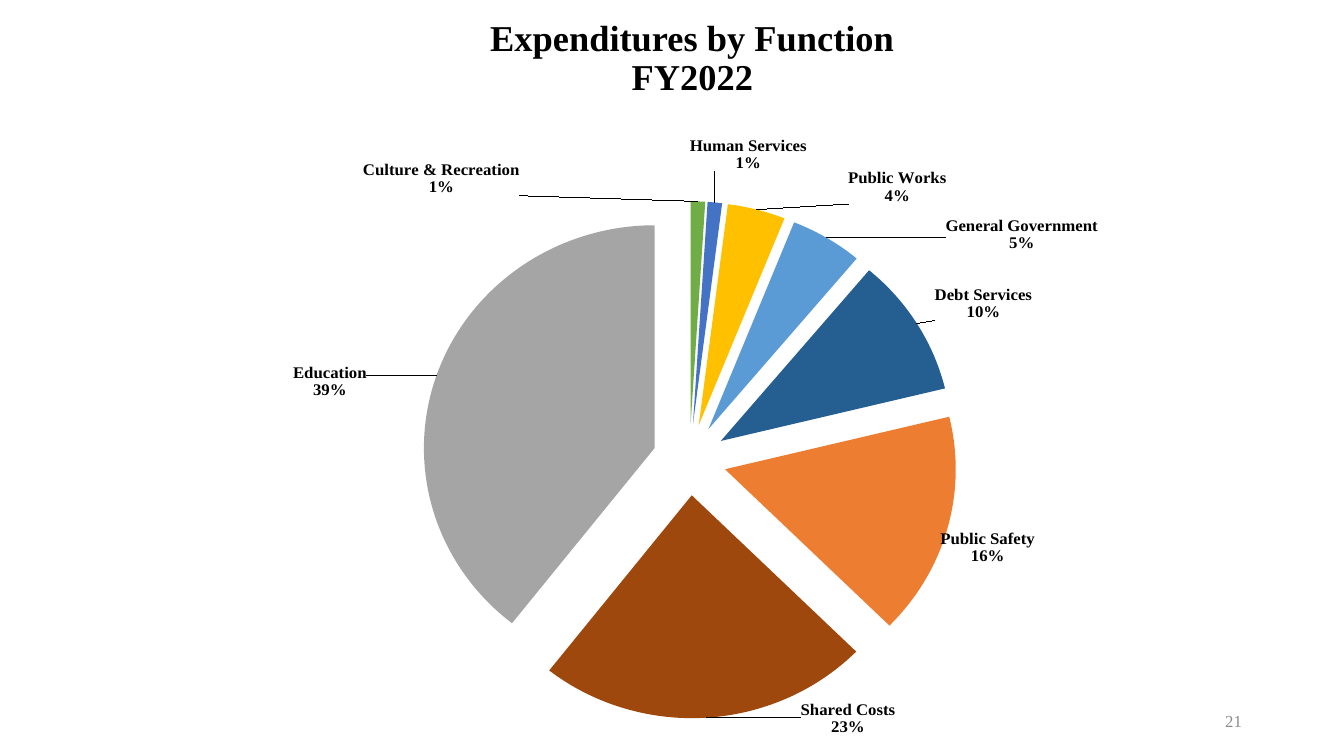
from dataclasses import dataclass

from lxml import etree
from pptx import Presentation
from pptx import util as u
from pptx.chart import data
from pptx.dml.color import RGBColor
from pptx.enum import chart as charts
from pptx.enum import text
from pptx.oxml import parse_xml
from pptx.oxml.ns import nsdecls, qn


@dataclass(frozen=True)
class Theme:
    font: str = "Times New Roman"
    ink: str = "000000"
    muted: str = "8C8C8C"
    title_size: int = 26
    label_size: int = 12
    number_size: int = 12


# function, percent, slice colour, label shift as fractions of the chart
EXPENDITURES = [
    ("Culture & Recreation", 1, "70AD47", (-0.2, 0)),
    ("Human Services", 1, "4472C4", (-0.02, -0.04)),
    ("Public Works", 4, "FFC000", (0.07, 0)),
    ("General Government", 5, "5B9BD5", (0.09, 0.03)),
    ("Debt Services", 10, "255E91", (0.01, 0)),
    ("Public Safety", 16, "ED7D31", (-0.01, 0)),
    ("Shared Costs", 23, "9E480E", (0.11, -0.02)),
    ("Education", 39, "A5A5A5", (-0.05, 0.04)),
]


def manual_layout(**settings):
    """Return a c:layout element holding the given settings in order."""
    parts = "".join(f'<c:{name} val="{value}"/>' for name, value in settings.items())
    return parse_xml(
        f'<c:layout {nsdecls("c")}><c:manualLayout>{parts}</c:manualLayout></c:layout>'
    )


class SlideBuilder:
    def __init__(self, presentation, theme):
        self.theme = theme
        self.slide = presentation.slides.add_slide(presentation.slide_layouts[5])

    def style_font(self, font, size, color, bold=False):
        font.name = self.theme.font
        font.size = u.Pt(size)
        font.bold = bold
        font.color.rgb = RGBColor.from_string(color)

    def add_title(self, lines, left, top, width, height):
        title = self.slide.shapes.title
        title.left, title.top = u.Cm(left), u.Cm(top)
        title.width, title.height = u.Cm(width), u.Cm(height)
        frame = title.text_frame
        frame.vertical_anchor = text.MSO_ANCHOR.MIDDLE
        frame.auto_size = text.MSO_AUTO_SIZE.NONE
        paragraph = frame.paragraphs[0]
        paragraph.alignment = text.PP_ALIGN.CENTER
        paragraph.line_spacing = 0.9
        for index, line in enumerate(lines):
            if index:
                paragraph.add_line_break()
            run = paragraph.add_run()
            run.text = line
            self.style_font(run.font, self.theme.title_size, self.theme.ink, True)

    def add_page_number(self, number, left, top, width, height):
        box = self.slide.shapes.add_textbox(
            u.Cm(left), u.Cm(top), u.Cm(width), u.Cm(height)
        )
        frame = box.text_frame
        frame.word_wrap = True
        frame.vertical_anchor = text.MSO_ANCHOR.MIDDLE
        paragraph = frame.paragraphs[0]
        paragraph.alignment = text.PP_ALIGN.RIGHT
        run = paragraph.add_run()
        run.text = str(number)
        self.style_font(run.font, self.theme.number_size, self.theme.muted)

    def add_pie(self, rows, left, top, width, height, explosion):
        chart_data = data.CategoryChartData()
        chart_data.categories = [row[0] for row in rows]
        chart_data.add_series("Expenditures", [row[1] for row in rows])
        chart = self.slide.shapes.add_chart(
            charts.XL_CHART_TYPE.PIE,
            u.Cm(left), u.Cm(top), u.Cm(width), u.Cm(height), chart_data,
        ).chart
        chart.has_legend = False
        chart.has_title = False
        self.style_font(chart.font, self.theme.label_size, self.theme.ink, True)
        self.place_plot(chart)

        plot = chart.plots[0]
        plot.vary_by_categories = True
        series = plot.series[0]
        labels = series.data_labels
        labels.show_percentage = labels.show_category_name = True
        labels.show_value = False
        labels.number_format = "0%"
        labels.number_format_is_linked = False
        labels.position = charts.XL_LABEL_POSITION.OUTSIDE_END
        self.style_font(labels.font, self.theme.label_size, self.theme.ink, True)

        for index, (_, _, color, _) in enumerate(rows):
            point = series.points[index]
            point.format.fill.solid()
            point.format.fill.fore_color.rgb = RGBColor.from_string(color)
            point.format.line.fill.background()
            label = point.data_label
            label.position = charts.XL_LABEL_POSITION.OUTSIDE_END
            self.style_font(label.font, self.theme.label_size, self.theme.ink, True)

        series_xml = chart.element.find(".//" + qn("c:ser"))
        series_xml.find(qn("c:dPt")).addprevious(
            parse_xml(f'<c:explosion {nsdecls("c")} val="{explosion}"/>')
        )
        for label_xml, row in zip(series_xml.iter(qn("c:dLbl")), rows):
            self.shift_label(label_xml, *row[3])

    def place_plot(self, chart):
        plot_area = chart.element.find(".//" + qn("c:plotArea"))
        for layout in plot_area.findall(qn("c:layout")):
            plot_area.remove(layout)
        plot_area.insert(0, manual_layout(
            layoutTarget="inner", xMode="edge", yMode="edge",
            x=0.305, y=0.145, w=0.417, h=0.827,
        ))

    def shift_label(self, label_xml, x, y):
        """Move one label off its slice and show category above percent."""
        for layout in label_xml.findall(qn("c:layout")):
            label_xml.remove(layout)
        label_xml.find(qn("c:idx")).addnext(manual_layout(x=x, y=y))
        label_xml.find(qn("c:txPr")).addprevious(parse_xml(
            f'<c:numFmt {nsdecls("c")} formatCode="0%" sourceLinked="0"/>'
        ))
        shown = {"showVal": "0", "showCatName": "1", "showPercent": "1"}
        for name, value in shown.items():
            label_xml.find(qn("c:" + name)).set("val", value)
        separator = etree.SubElement(label_xml, qn("c:separator"))
        separator.text = "\n"


def main():
    presentation = Presentation()
    presentation.slide_width = u.Cm(33.87)
    presentation.slide_height = u.Cm(19.05)
    builder = SlideBuilder(presentation, Theme())
    builder.add_title(
        ["Expenditures by Function", "FY2022"],
        left=1.88, top=0.23, width=31.14, height=2.54,
    )
    builder.add_pie(
        EXPENDITURES, left=0.76, top=2.79, width=32.36, height=16.31, explosion=16
    )
    builder.add_page_number(21, left=23.93, top=17.65, width=7.62, height=1.02)
    presentation.save("out.pptx")


if __name__ == "__main__":
    main()
